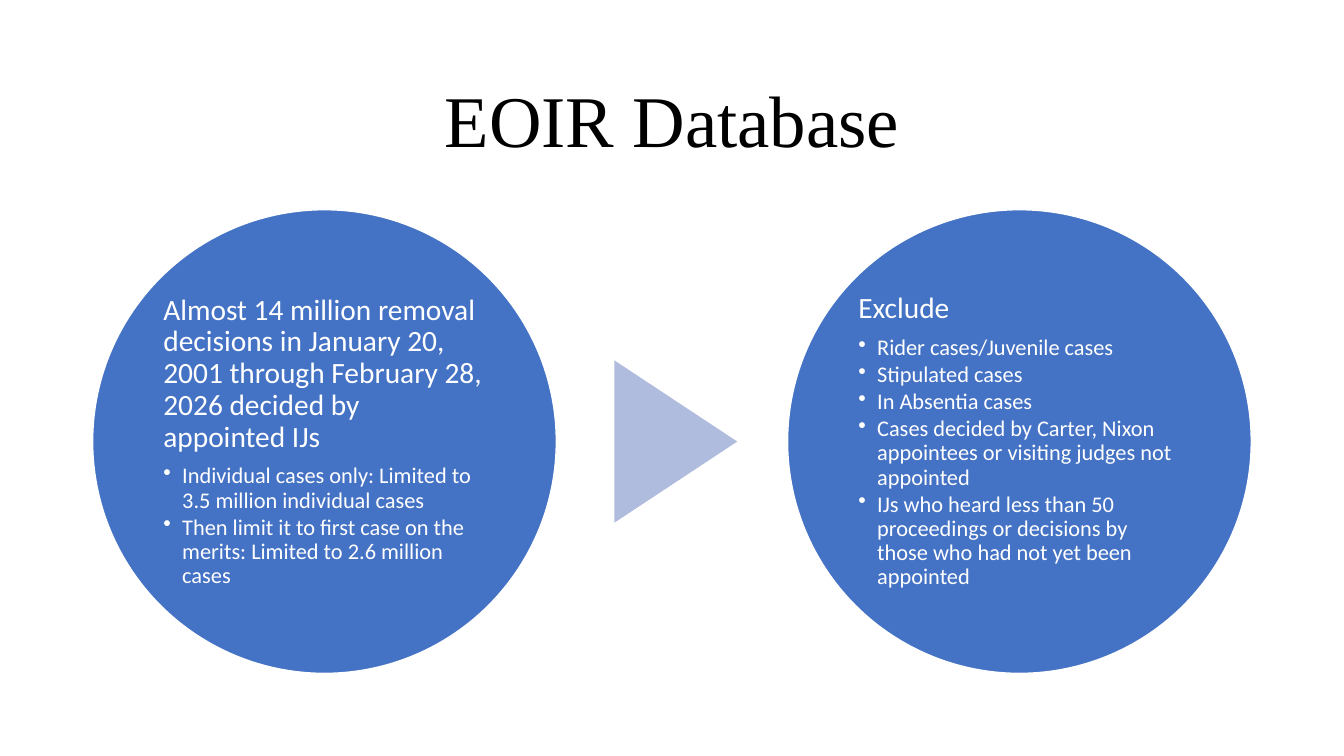
from dataclasses import dataclass

from lxml import etree
from pptx import Presentation
from pptx.dml.color import RGBColor as RGB
from pptx.enum.shapes import MSO_SHAPE as Shape
from pptx.enum.text import MSO_ANCHOR as Anchor, PP_ALIGN as Align
from pptx.oxml.ns import qn
from pptx.util import Pt

# Content
TITLE = "EOIR Database"
CIRCLES = [
    ("Almost 14 million removal decisions in January 20, 2001 through "
     "February 28, 2026 decided by appointed IJs",
     ["Individual cases only: Limited to 3.5 million individual cases",
      "Then limit it to first case on the merits: Limited to 2.6 million cases"]),
    ("Exclude",
     ["Rider cases/Juvenile cases",
      "Stipulated cases",
      "In Absentia cases",
      "Cases decided by Carter, Nixon appointees or visiting judges not appointed",
      "IJs who heard less than 50 proceedings or decisions by those who had "
      "not yet been appointed"]),
]


@dataclass(frozen=True)
class Theme:
    black: RGB = RGB(0x00, 0x00, 0x00)
    white: RGB = RGB(0xFF, 0xFF, 0xFF)
    circle: RGB = RGB(0x44, 0x72, 0xC4)
    arrow: RGB = RGB(0xB0, 0xBC, 0xDE)
    title_font: str = "Times New Roman"
    body_font: str = "Calibri"
    title_size: float = 52
    head_size: float = 21
    bullet_size: float = 16


T = Theme()

# Layout, in points
SLIDE_W, SLIDE_H = 960, 540
TITLE_BOX = (66, 44, 828, 89.5)
DIAMETER, TOP = 331.2, 149.8
MARGIN = 66.2
STEP = SLIDE_W - 2 * MARGIN - DIAMETER
ARROW_W, ARROW_H = 116, 87.8
ARROW_X = 482.7
INSET = 2
INDENT = 13.5


def add_text(p, text, *, size, font=T.body_font, color=T.white,
             align=Align.LEFT, after=0, bullet=False):
    p.alignment, p.line_spacing = align, 0.9
    p.space_before, p.space_after = Pt(0), Pt(after)
    if bullet:
        pPr = p._p.get_or_add_pPr()
        pPr.set("marL", str(Pt(INDENT)))
        pPr.set("indent", str(-Pt(INDENT)))
        etree.SubElement(pPr, qn("a:buChar"), char="•")
    r = p.add_run()
    r.text = text
    r.font.size, r.font.name = Pt(size), font
    r.font.color.rgb = color


def add_filled(s, kind, box, color):
    sp = s.shapes.add_shape(kind, *map(Pt, box))
    sp.shadow.inherit = False
    sp.fill.solid()
    sp.fill.fore_color.rgb = color
    sp.line.fill.background()
    return sp


def add_circle(s, left, heading, bullets):
    sp = add_filled(s, Shape.OVAL, (left, TOP, DIAMETER, DIAMETER), T.circle)
    sp.line.color.rgb, sp.line.width = T.white, Pt(1)
    tf = sp.text_frame
    tf.word_wrap, tf.vertical_anchor = True, Anchor.MIDDLE
    tf.margin_left = tf.margin_right = tf.margin_top = tf.margin_bottom = Pt(INSET)
    add_text(tf.paragraphs[0], heading, size=T.head_size, after=8)
    for bullet in bullets:
        add_text(tf.add_paragraph(), bullet, size=T.bullet_size, after=2, bullet=True)


def main():
    prs = Presentation()
    prs.slide_width, prs.slide_height = Pt(SLIDE_W), Pt(SLIDE_H)
    s = prs.slides.add_slide(prs.slide_layouts[5])

    # Title
    title = s.shapes.title
    title.left, title.top, title.width, title.height = map(Pt, TITLE_BOX)
    title.text_frame.vertical_anchor = Anchor.MIDDLE
    add_text(title.text_frame.paragraphs[0], TITLE, size=T.title_size,
             font=T.title_font, color=T.black, align=Align.CENTER)

    # Circles
    for i, (heading, bullets) in enumerate(CIRCLES):
        add_circle(s, MARGIN + i * STEP, heading, bullets)

    # Arrow between the circles, centred on their middle line
    middle = TOP + DIAMETER / 2
    arrow = add_filled(s, Shape.ISOSCELES_TRIANGLE,
                       (ARROW_X - ARROW_W / 2, middle - ARROW_H / 2, ARROW_W, ARROW_H),
                       T.arrow)
    arrow.rotation = 90

    prs.save("out.pptx")


if __name__ == "__main__":
    main()
